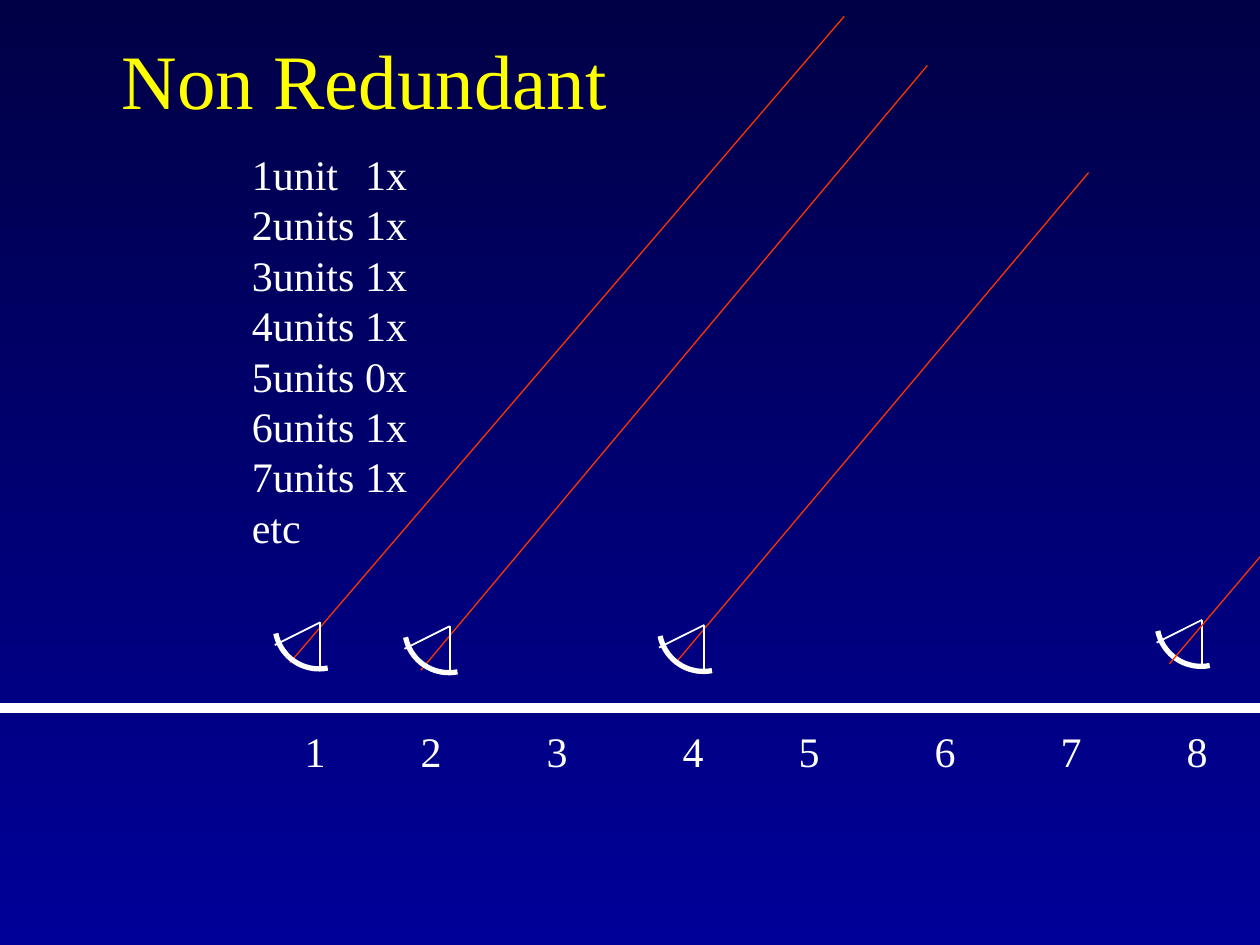
from math import cos, radians, sin

from lxml import etree
from pptx import Presentation
from pptx import util as u
from pptx.dml.color import RGBColor
from pptx.enum import shapes, text
from pptx.oxml.ns import qn

THEME = {
    "font": "Times New Roman",
    "title_size": 44, "body_size": 24,
    "title": "FFFF00", "ink": "FFFFFF", "beam": "FF3300",
    "sky_top": "000047", "sky_bottom": "000099",
    "ground_width": 6, "dish_width": 3, "strut_width": 1, "beam_width": 0.75,
}
TITLE = "Non Redundant"
SPACINGS = [("1unit", "1x"), ("2units", "1x"), ("3units", "1x"), ("4units", "1x"),
            ("5units", "0x"), ("6units", "1x"), ("7units", "1x"), ("etc",)]
STATIONS = ["1", "2", "3", "4", "5", "6", "7", "8"]
STATION_TABS = [0.92, 1.92, 3, 3.92, 5, 6, 7]
COUNT_TABS = [0.9]
FEEDS = [(2.54, 4.94), (3.57, 4.97), (5.59, 4.96), (9.54, 4.92)]
BEAMS = [((2.3, 5.26), (6.7, 0.13)), ((3.34, 5.32), (7.36, 0.52)),
         ((5.38, 5.24), (8.64, 1.37)), ((9.28, 5.27), (10, 4.42))]
GROUND_Y = 5.62
RADIUS, TILT, ARC_STEPS = 0.35, 78.7, 18
ARC_OFFSET = (-0.32, 0.05)
STRUTS = [(-0.36, 0.18), (0, 0.35)]


def add_text(slide, box, lines, size="body_size", color="ink", align=text.PP_ALIGN.LEFT,
             anchor=text.MSO_ANCHOR.TOP, tabs=()):
    """Add a text box with one paragraph per line and optional tab stops."""
    tf = slide.shapes.add_textbox(*map(u.Inches, box)).text_frame
    tf.word_wrap = True
    tf.vertical_anchor = anchor
    for i, line in enumerate(lines):
        p = tf.paragraphs[0] if i == 0 else tf.add_paragraph()
        p.alignment = align
        if tabs:
            stops = etree.SubElement(p._p.get_or_add_pPr(), qn("a:tabLst"))
            for pos in tabs:
                etree.SubElement(stops, qn("a:tab"), pos=str(u.Inches(pos)), algn="l")
        r = p.add_run()
        r.text = line
        r.font.name = THEME["font"]
        r.font.size = u.Pt(THEME[size])
        r.font.color.rgb = RGBColor.from_string(THEME[color])


def style_line(line, color, width):
    """Apply a theme colour and width to a line."""
    line.color.rgb = RGBColor.from_string(THEME[color])
    line.width = u.Pt(THEME[width])


def add_line(parent, start, end, color, width):
    """Add a straight connector without a shadow."""
    s = parent.shapes.add_connector(shapes.MSO_CONNECTOR.STRAIGHT,
                                    *map(u.Inches, (*start, *end)))
    style_line(s.line, color, width)
    etree.SubElement(s._element.spPr, qn("a:effectLst"))


def add_dish(slide, x, y):
    """Add a grouped antenna: a tilted quarter arc and two struts to its feed."""
    group = slide.shapes.add_group_shape()
    left, top = x + ARC_OFFSET[0], y + ARC_OFFSET[1]
    angles = [radians(90 * i / ARC_STEPS) for i in range(ARC_STEPS + 1)]
    points = [(u.Inches(left + RADIUS * cos(a)), u.Inches(top + RADIUS * sin(a)))
              for a in angles]
    builder = group.shapes.build_freeform(*points[0])
    builder.add_line_segments(points[1:], close=False)
    arc = builder.convert_to_shape()
    arc.rotation = TILT
    arc.shadow.inherit = False
    arc.fill.background()
    style_line(arc.line, "ink", "dish_width")
    for dx, dy in STRUTS:
        add_line(group, (x, y), (x + dx, y + dy), "ink", "strut_width")


def main():
    """Build and save the slide."""
    prs = Presentation()
    prs.slide_width, prs.slide_height = u.Inches(10), u.Inches(7.5)
    slide = prs.slides.add_slide(prs.slide_layouts[6])
    fill = slide.background.fill
    fill.gradient()
    fill.gradient_angle = 270
    for stop, name in zip(fill.gradient_stops, ("sky_top", "sky_bottom")):
        stop.color.rgb = RGBColor.from_string(THEME[name])

    add_line(slide, (0, GROUND_Y), (10, GROUND_Y), "ink", "ground_width")
    for beam in BEAMS[:-1]:
        add_line(slide, *beam, "beam", "beam_width")
    for feed in FEEDS:
        add_dish(slide, *feed)
    add_line(slide, *BEAMS[-1], "beam", "beam_width")

    add_text(slide, (2.32, 5.71, 7.37, 0.5), ["\t".join(STATIONS)], tabs=STATION_TABS)
    add_text(slide, (1.9, 1.13, 1.52, 3.3), ["\t".join(s) for s in SPACINGS],
             tabs=COUNT_TABS)
    add_text(slide, (-3.58, -0.25, 8.5, 1.29), [TITLE], size="title_size", color="title",
             align=text.PP_ALIGN.RIGHT, anchor=text.MSO_ANCHOR.BOTTOM)
    prs.save("out.pptx")


if __name__ == "__main__":
    main()
